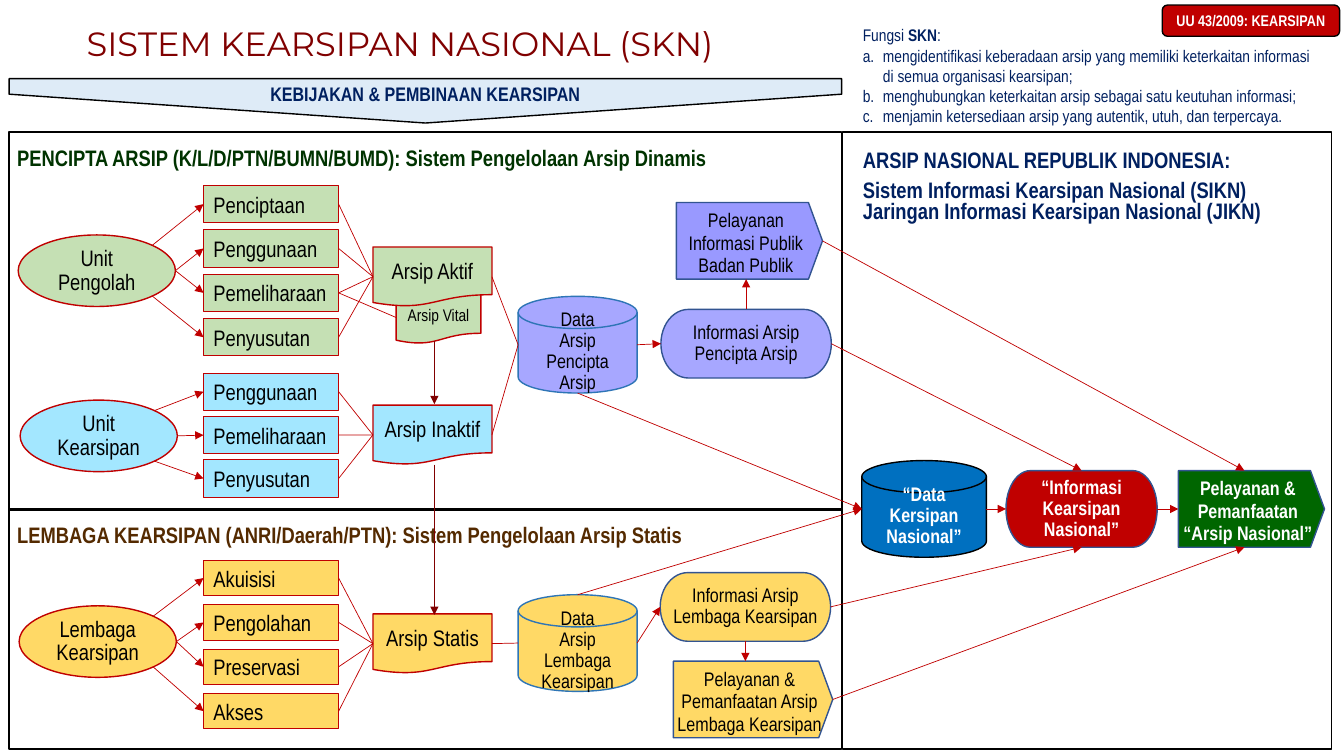
from lxml import etree
from pptx import Presentation
from pptx.dml.color import RGBColor
from pptx.enum import shapes, text
from pptx.oxml import ns
from pptx.util import Pt

COLORS = {
    "green": "C5E0B4", "cyan": "A3E7FF", "yellow": "FFD966", "lilac": "A7A7FF",
    "violet": "9999FF", "pale": "DEEBF7", "blue": "0070C0", "red": "C00000",
    "forest": "006600", "maroon": "800000", "navy": "002060", "moss": "003300",
    "brown": "542A00", "steel": "2E75B6", "indigo": "325491",
    "black": "000000", "white": "FFFFFF",
}
FONT = "Arial Narrow"
TITLE = "SISTEM KEARSIPAN NASIONAL (SKN)"
FUNCTIONS_LEAD = ("Fungsi ", "SKN", ":")
FUNCTIONS = [
    "mengidentifikasi keberadaan arsip yang memiliki keterkaitan informasi di semua organisasi kearsipan;",
    "menghubungkan keterkaitan arsip sebagai satu keutuhan informasi;",
    "menjamin ketersediaan arsip yang autentik, utuh, dan terpercaya.",
]
BANNER = "KEBIJAKAN & PEMBINAAN KEARSIPAN"
BADGE = "UU 43/2009: KEARSIPAN"

# Regions: box, insets, colour, line spacing, heading lines
REGIONS = [
    ((602, 94.3, 349.2, 440.6), (14.4, 14.4, 7.2, 3.6), "navy", Pt(15),
     ["ARSIP NASIONAL REPUBLIK INDONESIA:",
      "Sistem Informasi Kearsipan Nasional (SIKN)",
      "Jaringan Informasi Kearsipan Nasional (JIKN)"]),
    ((6.5, 94.3, 594.7, 270), (5.8, 8.6, 7.2, 3.6), "moss", None,
     ["PENCIPTA ARSIP (K/L/D/PTN/BUMN/BUMD): Sistem Pengelolaan Arsip Dinamis"]),
    ((6.5, 363.6, 594.7, 171.3), (5.8, 8.6, 7.2, 3.6), "brown", None,
     ["LEMBAGA KEARSIPAN (ANRI/Daerah/PTN): Sistem Pengelolaan Arsip Statis"]),
]

# Units: name, colour, left, top, document, document top, first step top, pitch, step height, steps
UNITS = [
    ("Unit Pengolah", "green", 13, 167.8, "Arsip Aktif", 176.4, 132.5, 31.7, 26.6,
     ["Penciptaan", "Penggunaan", "Pemeliharaan", "Penyusutan"]),
    ("Unit Kearsipan", "cyan", 14.4, 285.8, "Arsip Inaktif", 289.4, 266.5, 31, 26.6,
     ["Penggunaan", "Pemeliharaan", "Penyusutan"]),
    ("Lembaga Kearsipan", "yellow", 13.7, 432.7, "Arsip Statis", 438.5, 400.3, 31.7, 25.2,
     ["Akuisisi", "Pengolahan", "Preservasi", "Akses"]),
]

# Kinds: preset, text size, line spacing, insets
KINDS = {
    "step": (shapes.MSO_SHAPE.RECTANGLE, 16, None, (7.2, 3.6, 7.2, 3.6)),
    "unit": (shapes.MSO_SHAPE.OVAL, 16, Pt(17), (7.2, 3.6, 7.2, 3.6)),
    "document": (shapes.MSO_SHAPE.FLOWCHART_DOCUMENT, 16, None, (7.2, 3.6, 7.2, 3.6)),
    "note": (shapes.MSO_SHAPE.FLOWCHART_DOCUMENT, 12, None, (7.2, 3.6, 7.2, 0)),
    "disk": (shapes.MSO_SHAPE.FLOWCHART_MAGNETIC_DISK, 14, Pt(15), (7.2, 2.2, 7.2, 3.6)),
    "pill": (shapes.MSO_SHAPE.FLOWCHART_TERMINATOR, 14, Pt(15), (2.9, 2.9, 2.9, 2.9)),
    "plate": (shapes.MSO_SHAPE.PENTAGON, 14, Pt(16), (1.2, 2.9, 1.2, 0)),
    "badge": (shapes.MSO_SHAPE.ROUNDED_RECTANGLE, 11, None, (7.2, 3.6, 7.2, 3.6)),
    "banner": (shapes.MSO_SHAPE.PENTAGON, 14, None, (0, 0, 0, 0)),
}
PLATE_TIP = 0.183

# Flow parts: key, kind, box, fill, line, lines of text
FLOW = [
    ("creator data", "disk", (370.1, 211.7, 85, 69.1), "lilac", "steel", ["Data", "Arsip Pencipta Arsip"]),
    ("holder data", "disk", (370.1, 424.8, 85, 69.1), "yellow", "steel", ["Data", "Arsip Lembaga Kearsipan"]),
    ("national data", "disk", (615.6, 329, 89, 69.1), "blue", "black", ["“Data Kersipan Nasional”"]),
    ("creator info", "pill", (472.1, 221, 121.7, 49), "lilac", "indigo", ["Informasi Arsip", "Pencipta Arsip"]),
    ("holder info", "pill", (471.6, 409, 121.7, 49), "yellow", "indigo", ["Informasi Arsip Lembaga Kearsipan"]),
    ("national info", "pill", (718.6, 336.2, 108, 54.7), "red", "indigo", ["“Informasi Kearsipan Nasional”"]),
    ("creator service", "plate", (483.1, 144.7, 104.4, 54.7), "violet", "indigo",
     ["Pelayanan Informasi Publik", "Badan Publik"]),
    ("holder service", "plate", (481, 472.3, 113.8, 54.7), "yellow", "indigo",
     ["Pelayanan & Pemanfaatan Arsip Lembaga Kearsipan"]),
    ("national service", "plate", (841.7, 336.2, 104.4, 54.7), "forest", "indigo",
     ["Pelayanan & Pemanfaatan “Arsip Nasional”"]),
]

# Links: start, side, end, side, arrow
LINKS = [
    (("Unit Pengolah", 2), "right", "Arsip Vital", "left", False),
    ("Arsip Aktif", "right", "creator data", "left", False),
    ("Arsip Inaktif", "right", "creator data", "left", False),
    ("Arsip Statis", "right", "holder data", "left", False),
    ("creator data", "right", "creator info", "left", True),
    ("holder data", "right", "holder info", "left", True),
    ("creator data", "bottom", "national data", "left", True),
    ("holder data", "top", "national data", "left", True),
    ("national data", "right", "national info", "left", True),
    ("creator info", "right", "national info", "top", True),
    ("holder info", "right", "national info", "bottom", True),
    ("creator info", "top", "creator service", "bottom", True),
    ("holder info", "bottom", "holder service", "top", True),
    ("national info", "right", "national service", "left", True),
    ("creator service", "right", "national service", "top", True),
    ("holder service", "right", "national service", "bottom", True),
]
TRANSFER_X = 310.3
TRANSFERS = [(243.4, 288.7), (331.9, 439.2)]
SIDES = {"left": (0, 0.5), "right": (1, 0.5), "top": (0.5, 0), "bottom": (0.5, 1),
         "upper right": (0.85, 0.15), "lower right": (0.85, 0.85)}

deck = Presentation()
deck.slide_width, deck.slide_height = Pt(960), Pt(540)
page = deck.slides.add_slide(deck.slide_layouts[1])
parts = {}


def rgb(name):
    return RGBColor.from_string(COLORS[name])


def style(para, size, color, bold=False, font=FONT):
    for span in para.runs:
        span.font.name, span.font.size, span.font.bold = font, Pt(size), bold
        span.font.color.rgb = rgb(color)


def set_insets(frame, insets):
    frame.margin_left, frame.margin_top, frame.margin_right, frame.margin_bottom = map(Pt, insets)


def place(shape, box):
    shape.left, shape.top, shape.width, shape.height = map(Pt, box)


def add_box(preset, box, fill, line, width, lines, size, color, bold, spacing, insets, align, anchor):
    shape = page.shapes.add_shape(preset, *map(Pt, box))
    shape.shadow.inherit = False
    if fill:
        shape.fill.solid()
        shape.fill.fore_color.rgb = rgb(fill)
    else:
        shape.fill.background()
    shape.line.color.rgb, shape.line.width = rgb(line), Pt(width)
    frame = shape.text_frame
    frame.word_wrap, frame.vertical_anchor = True, anchor
    set_insets(frame, insets)
    frame.text = "\n".join(lines)
    for para in frame.paragraphs:
        para.alignment, para.line_spacing = align, spacing
        style(para, size, color, bold)
    return shape


def add_part(key, kind, box, fill, line, lines):
    preset, size, spacing, insets = KINDS[kind]
    dark = fill in ("blue", "red", "forest")
    color = "white" if dark else "navy" if kind == "banner" else "black"
    align = text.PP_ALIGN.LEFT if kind == "step" else text.PP_ALIGN.CENTER
    shape = add_box(preset, box, fill, line, 0.75 if kind == "step" else 1, lines, size, color,
                    dark or kind == "banner", spacing, insets, align, text.MSO_ANCHOR.MIDDLE)
    if kind == "step":
        shape.text_frame.word_wrap = False
    if kind == "plate":
        shape.adjustments[0] = PLATE_TIP
    parts[key] = (kind, box)
    return shape


def anchor_point(key, side):
    kind, (left, top, width, height) = parts[key]
    across, down = SIDES[side]
    if kind == "plate" and side in ("top", "bottom"):
        width -= PLATE_TIP * height
    return left + across * width, top + down * height


def add_line(start, end, arrow, color="red"):
    line = page.shapes.add_connector(shapes.MSO_CONNECTOR.STRAIGHT, *map(Pt, start + end))
    line.line.color.rgb, line.line.width = rgb(color), Pt(0.5)
    if arrow:
        etree.SubElement(line.line._get_or_add_ln(), ns.qn("a:tailEnd"), type="triangle")
    etree.SubElement(line._element.spPr, ns.qn("a:effectLst"))


def link(start, start_side, end, end_side, arrow):
    first, last = anchor_point(start, start_side), anchor_point(end, end_side)
    if abs(first[0] - last[0]) < 4:
        last = (first[0], last[1])
    add_line(first, last, arrow)


# Title
title = page.shapes.title
place(title, (54.7, 13, 515.5, 36))
title.text_frame.text = TITLE
title.text_frame.vertical_anchor = text.MSO_ANCHOR.TOP
title.text_frame.paragraphs[0].alignment = text.PP_ALIGN.LEFT
style(title.text_frame.paragraphs[0], 24, "maroon", font="Montserrat")

# List of functions
body = page.placeholders[1]
place(body, (609.1, 14.4, 334.8, 79.9))
body.text_frame.text = "\n".join([""] + FUNCTIONS)
for words in FUNCTIONS_LEAD:
    body.text_frame.paragraphs[0].add_run().text = words
for number, para in enumerate(body.text_frame.paragraphs):
    para.space_before, para.line_spacing = Pt(0), 1
    style(para, 12, "navy")
    layout = para._p.get_or_add_pPr()
    layout.set("marL", str(Pt(14.4)))
    layout.set("indent", str(Pt(-14.4)))
    if number:
        etree.SubElement(layout, ns.qn("a:buFont"), typeface=FONT)
        etree.SubElement(layout, ns.qn("a:buAutoNum"), type="alphaLcPeriod")
    else:
        etree.SubElement(layout, ns.qn("a:buNone"))
body.text_frame.paragraphs[0].runs[1].font.bold = True

# Regions
for box, insets, color, spacing, lines in REGIONS:
    region = add_box(shapes.MSO_SHAPE.RECTANGLE, box, None, "black", 1, lines, 16, color, True,
                     spacing, insets, text.PP_ALIGN.LEFT, text.MSO_ANCHOR.TOP)
    if len(lines) > 1:
        region.text_frame.paragraphs[0].space_after = Pt(6)

# Units, their steps and documents
add_part("Arsip Vital", "note", (283, 208.1, 60.5, 37.4), "green", "red", ["Arsip Vital"])
for unit, color, left, top, document, document_top, first_top, pitch, height, steps in UNITS:
    add_part(unit, "unit", (left, top, 112.3, 51.1), color, "red", [unit])
    add_part(document, "document", (266.4, document_top, 85, 42.5), color, "red", [document])
    for row, step in enumerate(steps):
        key = (unit, row)
        add_part(key, "step", (145.4, first_top + row * pitch, 96.5, height), color, "red", [step])
        side = {0: "upper right", len(steps) - 1: "lower right"}.get(row, "right")
        link(unit, side, key, "left", True)
        link(key, "right", document, "left", False)

# Data, information and services
for part in FLOW:
    add_part(*part)
for connection in LINKS:
    link(*connection)
for start_y, end_y in TRANSFERS:
    add_line((TRANSFER_X, start_y), (TRANSFER_X, end_y), True, "maroon")

# Banner, turned to point down, and badge
banner = add_part("banner", "banner", (288, -225.3, 31.7, 594.7), "pale", "black", [BANNER])
banner.rotation = 90
banner.adjustments[0] = 0.65
banner.text_frame._txBody.bodyPr.set("vert", "vert270")
add_part("badge", "badge", (830.2, 3.6, 126.7, 22.3), "red", "black", [BADGE])

deck.save("out.pptx")
